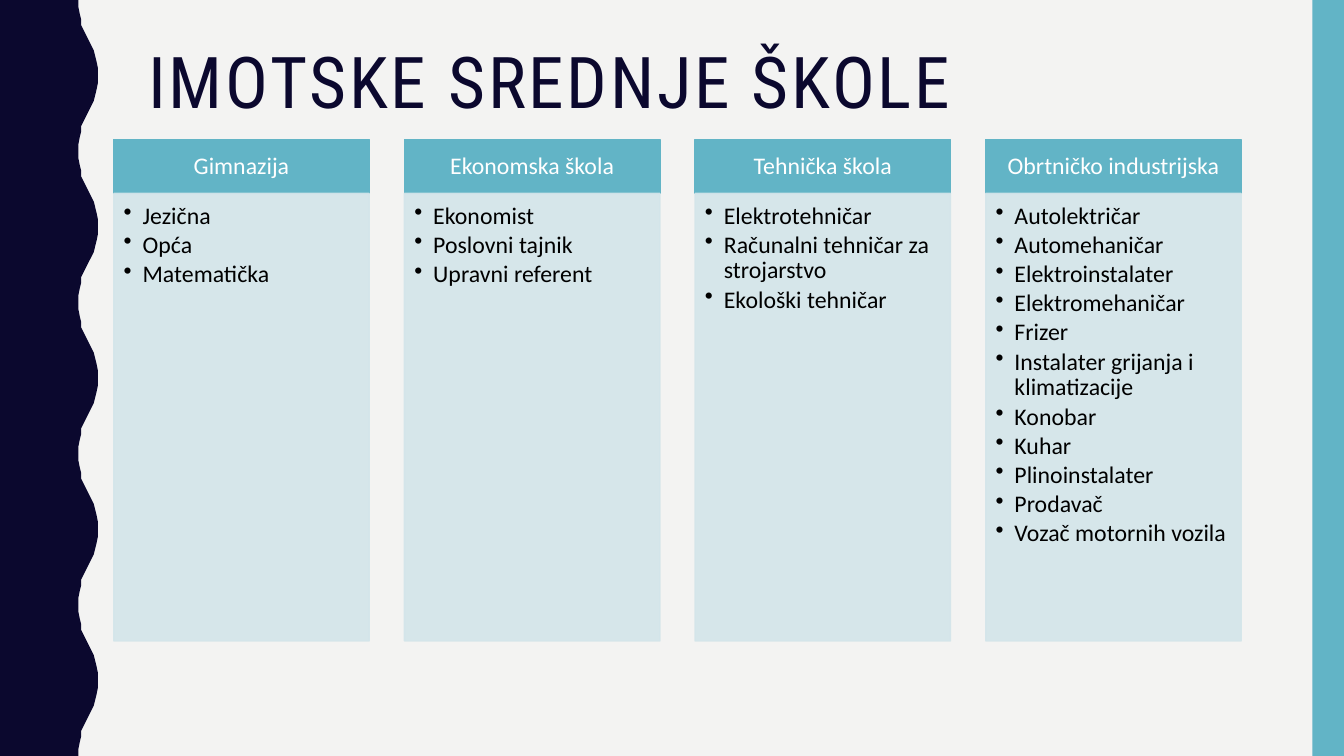
from lxml import etree
from pptx import Presentation
from pptx.dml.color import RGBColor
from pptx.enum.shapes import MSO_SHAPE
from pptx.enum.text import MSO_ANCHOR, PP_ALIGN
from pptx.oxml.ns import qn
from pptx.util import Pt

RECTANGLE = MSO_SHAPE.RECTANGLE
TOP, MIDDLE = MSO_ANCHOR.TOP, MSO_ANCHOR.MIDDLE
LEFT, CENTER = PP_ALIGN.LEFT, PP_ALIGN.CENTER

SLIDE_WIDTH, SLIDE_HEIGHT = 960, 540
NAVY, TEAL, PALE_TEAL = "0B082E", "62B4C6", "D3E5EA"
PAPER, WHITE, BLACK = "F3F3F2", "FFFFFF", "000000"
TITLE_FONT, BODY_FONT = "Roboto Condensed", "Calibri"

COLUMN_LEFT, COLUMN_PITCH, COLUMN_WIDTH = 81.3, 207.6, 182.5
HEADER_TOP, HEADER_HEIGHT, PANEL_HEIGHT = 99.5, 38.7, 319.7

WAVE_PERIOD = 108
WAVE_HALF = [(56, 0), (56.4, 5), (57, 10), (57.6, 14.4), (58.5, 18), (67, 36),
             (68.4, 39.6), (69.2, 44), (69.8, 49), (70, 54)]

SCHOOLS = {
    "Gimnazija": ["Jezična", "Opća", "Matematička"],
    "Ekonomska škola": ["Ekonomist", "Poslovni tajnik", "Upravni referent"],
    "Tehnička škola": ["Elektrotehničar", "Računalni tehničar za strojarstvo",
                       "Ekološki tehničar"],
    "Obrtničko industrijska": [
        "Autolektričar", "Automehaničar", "Elektroinstalater",
        "Elektromehaničar", "Frizer", "Instalater grijanja i klimatizacije",
        "Konobar", "Kuhar", "Plinoinstalater", "Prodavač",
        "Vozač motornih vozila"],
}


def set_color(color_format, hex_color):
    color_format.rgb = RGBColor.from_string(hex_color)


def paint(shape, hex_color, outlined=False):
    shape.shadow.inherit = False
    shape.fill.solid()
    set_color(shape.fill.fore_color, hex_color)
    if outlined:
        shape.line.width = Pt(1)
        set_color(shape.line.color, hex_color)
    else:
        shape.line.fill.background()


def add_rectangle(slide, left, top, width, height, hex_color, outlined=False):
    box = slide.shapes.add_shape(RECTANGLE, Pt(left), Pt(top), Pt(width), Pt(height))
    paint(box, hex_color, outlined)
    return box


def make_translucent(shape, percent):
    """Set the opacity of both fill and outline."""
    for color in shape._element.spPr.iter(qn("a:srgbClr")):
        etree.SubElement(color, qn("a:alpha"), val=str(percent * 1000))


def set_frame(frame, anchor, left, top, right, bottom):
    frame.word_wrap = True
    frame.vertical_anchor = anchor
    frame.margin_left, frame.margin_top = Pt(left), Pt(top)
    frame.margin_right, frame.margin_bottom = Pt(right), Pt(bottom)


def style_paragraph(para, font_name, size, hex_color, alignment):
    para.alignment = alignment
    para.line_spacing = 0.9
    para.font.name = font_name
    para.font.size = Pt(size)
    set_color(para.font.color, hex_color)


def add_bullet(para):
    properties = para._p.get_or_add_pPr()
    properties.set("marL", str(Pt(13.5)))
    properties.set("indent", str(Pt(-13.5)))
    bullet = etree.Element(qn("a:buChar"), char="•")
    properties.insert_element_before(bullet, "a:tabLst", "a:defRPr", "a:extLst")


def add_wave(slide):
    """Draw the left band, whose right edge repeats one mirrored half wave."""
    falling = [(x, WAVE_PERIOD - y) for x, y in reversed(WAVE_HALF[1:-1])]
    period = WAVE_HALF + falling
    edge = [(x, y + start) for start in range(0, SLIDE_HEIGHT, WAVE_PERIOD)
            for x, y in period]
    edge += [(WAVE_HALF[0][0], SLIDE_HEIGHT), (0, SLIDE_HEIGHT)]
    builder = slide.shapes.build_freeform(0, 0, scale=Pt(1))
    builder.add_line_segments(edge, close=True)
    paint(builder.convert_to_shape(), NAVY)


def set_title(slide, text):
    title = slide.shapes.title
    title.left, title.top, title.width, title.height = Pt(98.6), Pt(30.2), Pt(801.4), Pt(72.7)
    set_frame(title.text_frame, TOP, 7.2, 3.6, 7.2, 3.6)
    para = title.text_frame.paragraphs[0]
    span = para.add_run()
    span.text = text
    style_paragraph(para, TITLE_FONT, 51, NAVY, LEFT)
    span.font._element.set("spc", "200")


def add_school(slide, left, name, programmes):
    header = add_rectangle(slide, left, HEADER_TOP, COLUMN_WIDTH, HEADER_HEIGHT, TEAL, True)
    set_frame(header.text_frame, MIDDLE, 9.4, 5.4, 9.4, 5.4)
    header.text_frame.text = name
    style_paragraph(header.text_frame.paragraphs[0], BODY_FONT, 17, WHITE, CENTER)

    panel = add_rectangle(slide, left, HEADER_TOP + HEADER_HEIGHT,
                          COLUMN_WIDTH, PANEL_HEIGHT, PALE_TEAL, True)
    make_translucent(panel, 90)
    set_frame(panel.text_frame, TOP, 7.2, 7.2, 9.4, 10.8)
    panel.text_frame.text = "\n".join(programmes)
    for para in panel.text_frame.paragraphs:
        style_paragraph(para, BODY_FONT, 17, BLACK, LEFT)
        para.space_after = Pt(2.5)
        add_bullet(para)


def main():
    deck = Presentation()
    deck.slide_width, deck.slide_height = Pt(SLIDE_WIDTH), Pt(SLIDE_HEIGHT)
    slide = deck.slides.add_slide(deck.slide_layouts.get_by_name("Title Only"))
    slide.background.fill.solid()
    set_color(slide.background.fill.fore_color, PAPER)

    add_wave(slide)
    add_rectangle(slide, 937.5, 0, 22.5, SLIDE_HEIGHT, TEAL)
    set_title(slide, "IMOTSKE SREDNJE ŠKOLE")
    for index, (name, programmes) in enumerate(SCHOOLS.items()):
        add_school(slide, COLUMN_LEFT + index * COLUMN_PITCH, name, programmes)
    deck.save("out.pptx")


if __name__ == "__main__":
    main()
